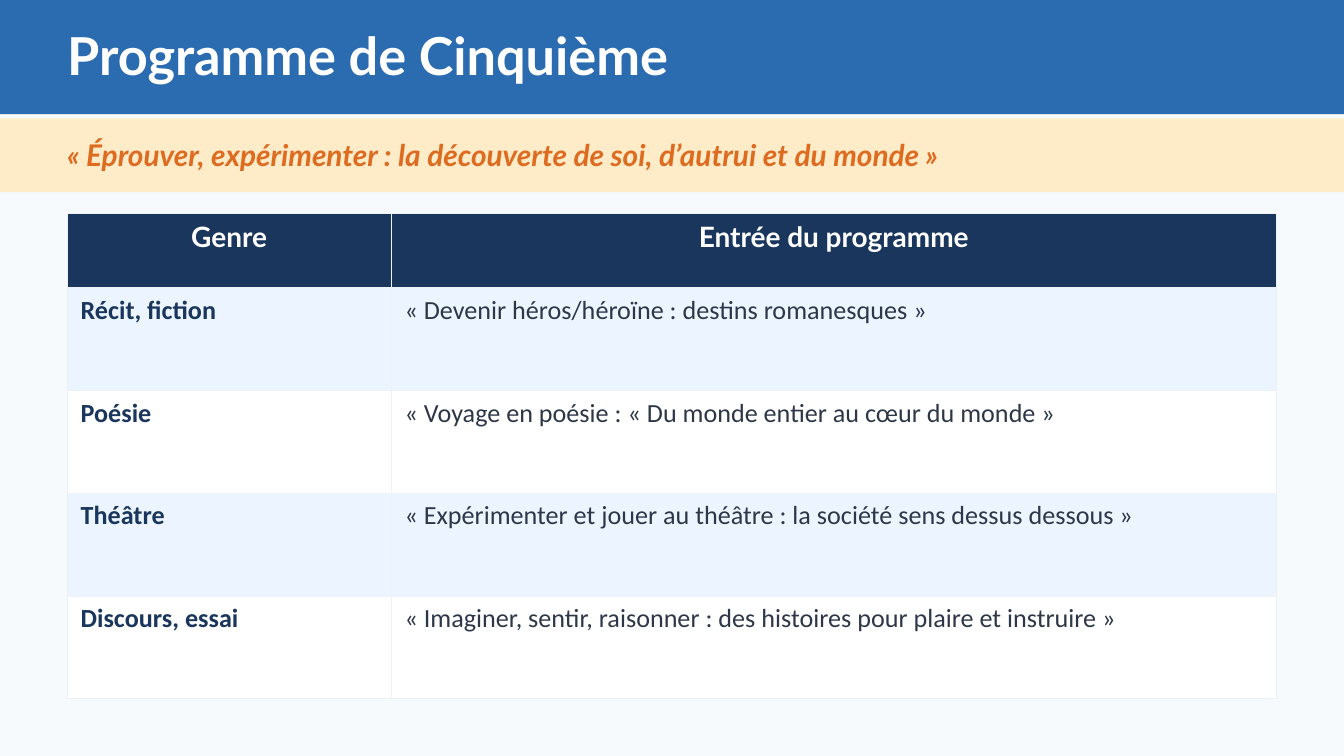
import pptx
import pptx.dml.color
import pptx.enum.shapes
import pptx.enum.text
import pptx.oxml
import pptx.oxml.ns
import pptx.util

TITLE = "Programme de Cinquième"
THEME = "« Éprouver, expérimenter : la découverte de soi, d’autrui et du monde »"
HEADINGS = ("Genre", "Entrée du programme")
ENTRIES = [
    ("Récit, fiction", "« Devenir héros/héroïne : destins romanesques »"),
    ("Poésie", "« Voyage en poésie : « Du monde entier au cœur du monde »"),
    ("Théâtre", "« Expérimenter et jouer au théâtre : la société sens dessus dessous »"),
    ("Discours, essai", "« Imaginer, sentir, raisonner : des histoires pour plaire et instruire »"),
]

WIDTH, MARGIN = 10, 0.5
HEIGHT = WIDTH * 9 / 16
CONTENT_WIDTH = WIDTH - 2 * MARGIN
TABLE_TOP, TABLE_HEIGHT, HEADER_HEIGHT = 1.59, 3.61, 0.55
ENTRY_HEIGHT = (TABLE_HEIGHT - HEADER_HEIGHT) / len(ENTRIES)
GENRE_WIDTH = 2.41
NAVY, WHITE, BORDER = "1A365D", "FFFFFF", "EDF2F7"
STRIPES = ("EBF4FF", WHITE)

inches = pptx.util.Inches


def paint(fill, color):
    fill.solid()
    fill.fore_color.rgb = pptx.dml.color.RGBColor.from_string(color)


def write(frame, text, size, color, font="Lato", bold=True, italic=False, align="LEFT"):
    paragraph = frame.paragraphs[0]
    paragraph.alignment = getattr(pptx.enum.text.PP_ALIGN, align)
    run = paragraph.add_run()
    run.text = text
    run.font.name, run.font.size = font, pptx.util.Pt(size)
    run.font.bold, run.font.italic = bold, italic
    run.font.color.rgb = pptx.dml.color.RGBColor.from_string(color)


def add_band(slide, top, height, color):
    band = slide.shapes.add_shape(
        pptx.enum.shapes.MSO_SHAPE.RECTANGLE, 0, inches(top), inches(WIDTH), inches(height))
    paint(band.fill, color)
    band.line.fill.background()
    band.shadow.inherit = False
    return band


def place_line(box, top, height):
    """Fit a one-line text box between the margins, without insets."""
    box.left, box.top = inches(MARGIN), inches(top)
    box.width, box.height = inches(CONTENT_WIDTH), inches(height)
    frame = box.text_frame
    frame.word_wrap = True
    frame.auto_size = pptx.enum.text.MSO_AUTO_SIZE.NONE
    frame.vertical_anchor = pptx.enum.text.MSO_ANCHOR.MIDDLE
    frame.margin_left = frame.margin_top = frame.margin_right = frame.margin_bottom = 0
    return frame


def outline(cell):
    properties = cell._tc.get_or_add_tcPr()
    for position, side in enumerate(("lnL", "lnR", "lnT", "lnB")):
        properties.insert(position, pptx.oxml.parse_xml(
            f'<a:{side} {pptx.oxml.ns.nsdecls("a")} w="{pptx.util.Pt(0.5)}">'
            f'<a:solidFill><a:srgbClr val="{BORDER}"/></a:solidFill></a:{side}>'))


def add_programme(slide):
    rows = [HEADINGS] + ENTRIES
    table = slide.shapes.add_table(
        len(rows), len(HEADINGS), inches(MARGIN), inches(TABLE_TOP),
        inches(CONTENT_WIDTH), inches(TABLE_HEIGHT)).table
    for column, width in zip(table.columns, (GENRE_WIDTH, CONTENT_WIDTH - GENRE_WIDTH)):
        column.width = inches(width)
    for r, texts in enumerate(rows):
        table.rows[r].height = inches(ENTRY_HEIGHT if r else HEADER_HEIGHT)
        for c, text in enumerate(texts):
            cell = table.cell(r, c)
            paint(cell.fill, STRIPES[(r - 1) % 2] if r else NAVY)
            outline(cell)
            if r == 0:
                write(cell.text_frame, text, 15, WHITE, align="CENTER")
            else:
                write(cell.text_frame, text, 14, "2D3748" if c else NAVY, "Calibri", bold=c == 0)


def main():
    deck = pptx.Presentation()
    deck.slide_width, deck.slide_height = inches(WIDTH), inches(HEIGHT)
    slide = deck.slides.add_slide(deck.slide_layouts.get_by_name("Title Only"))
    paint(slide.background.fill, "F7FAFC")

    title = slide.shapes.title
    title_band = add_band(slide, 0, 0.85, "2B6CB0")
    title.element.addprevious(title_band.element)
    write(place_line(title, 0.1, 0.62), TITLE, 28, WHITE)

    add_band(slide, 0.88, 0.55, "FEEBC8")
    theme = slide.shapes.add_textbox(0, 0, 0, 0)
    write(place_line(theme, 0.91, 0.48), THEME, 16, "DD6B20", italic=True)

    add_programme(slide)
    deck.save("out.pptx")


if __name__ == "__main__":
    main()
